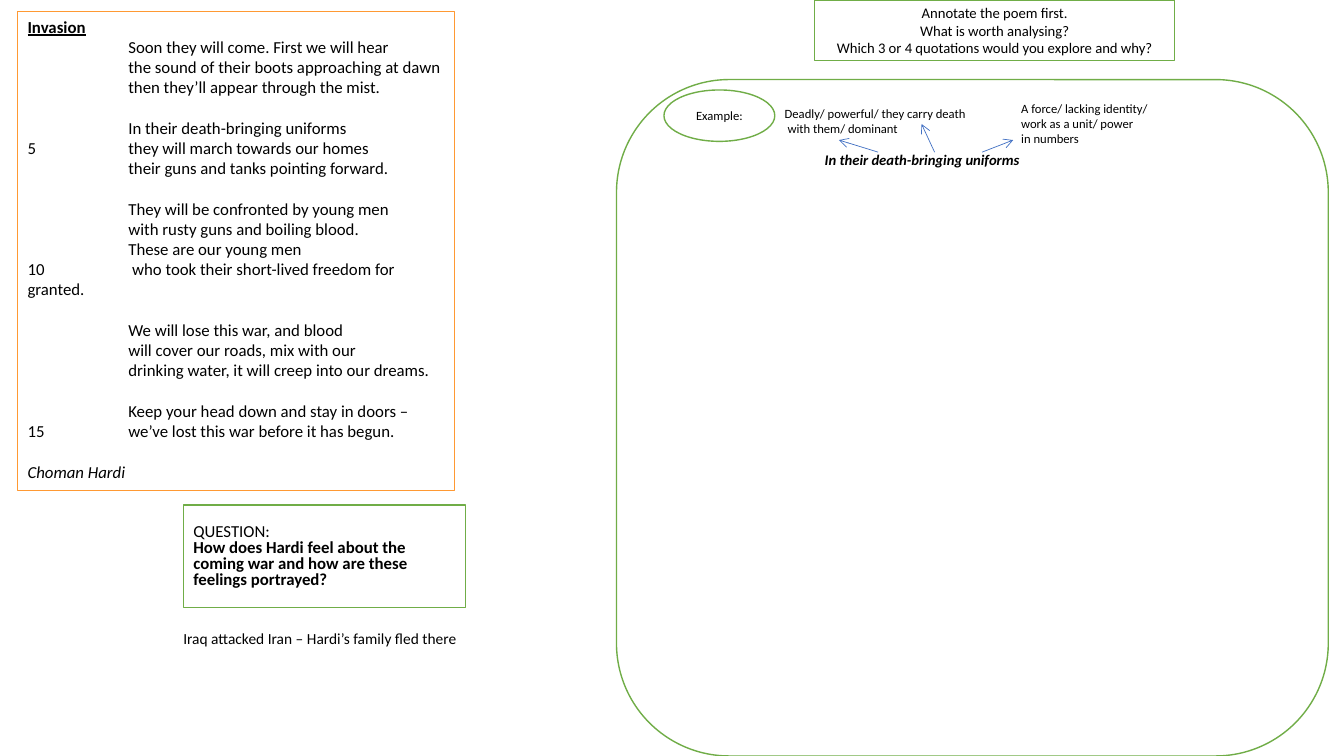
"""Build a one-page poetry analysis worksheet for "Invasion"."""
from dataclasses import dataclass

from lxml import etree
from pptx import Presentation
from pptx import util as u
from pptx.dml.color import RGBColor
from pptx.enum import shapes, text
from pptx.oxml.ns import qn

WIDTH, HEIGHT = u.Inches(13.33), u.Inches(7.5)
FONT, BLACK, WHITE = "Calibri", "000000", "FFFFFF"
GREEN, ORANGE, BLUE = "70AD47", "FF9933", "4472C4"
STANZA_GAP = 14.65
VERSE_TABS = (7.5, 30)

RECT = shapes.MSO_SHAPE.RECTANGLE
ROUNDED = shapes.MSO_SHAPE.ROUNDED_RECTANGLE
OVAL = shapes.MSO_SHAPE.OVAL
LEFT, CENTER = text.PP_ALIGN.LEFT, text.PP_ALIGN.CENTER
TOP, MIDDLE = text.MSO_ANCHOR.TOP, text.MSO_ANCHOR.MIDDLE

STANZAS = (
    (
        "Invasion",
        "\tSoon they will come. First we will hear",
        "\tthe sound of their boots approaching at dawn",
        "\tthen they’ll appear through the mist.",
    ),
    (
        "\tIn their death-bringing uniforms",
        "5 \tthey will march towards our homes",
        "\ttheir guns and tanks pointing forward.",
    ),
    (
        "\tThey will be confronted by young men",
        "\twith rusty guns and boiling blood.",
        "\tThese are our young men",
        "10\t who took their short-lived freedom for \tgranted.",
    ),
    (
        "\tWe will lose this war, and blood",
        "\twill cover our roads, mix with our",
        "\tdrinking water, it will creep into our dreams.",
    ),
    (
        "\tKeep your head down and stay in doors –",
        "15 \twe’ve lost this war before it has begun.",
    ),
    ("Choman Hardi",),
)


@dataclass(frozen=True)
class Panel:
    """A box placed in percent of the slide's width and height."""

    left: float
    top: float
    width: float
    height: float
    lines: tuple[str, ...] = ()
    size: float = 12
    kind: shapes.MSO_SHAPE | None = RECT
    line: str | None = GREEN
    weight: float = 1
    align: text.PP_ALIGN = LEFT
    anchor: text.MSO_ANCHOR = MIDDLE
    wrap: bool = True


@dataclass(frozen=True)
class Note(Panel):
    """An unframed text box as wide as its text."""

    size: float = 9
    kind: shapes.MSO_SHAPE | None = None
    anchor: text.MSO_ANCHOR = TOP
    wrap: bool = False


@dataclass(frozen=True)
class Arrow:
    """An arrow from the quotation up to an annotation, in percent."""

    start: float
    end: float
    end_top: float


POEM = Panel(1.31, 1.5, 32.48, 63.33, tuple(verse for stanza in STANZAS for verse in stanza),
             line=ORANGE, weight=0.75, anchor=TOP)
CONTEXT = Panel(12.9, 82.53, 22.5, 3.87, ("Iraq attacked Iran – Hardi’s family fled there",),
                size=11, line=None, anchor=TOP, wrap=False)
TASK = Panel(60.62, 0, 26.78, 8,
             ("Annotate the poem first.", "What is worth analysing?",
              "Which 3 or 4 quotations would you explore and why?"),
             size=10.5, align=CENTER)
QUESTION = Panel(13.65, 66.8, 21, 13.6,
                 ("QUESTION:",
                  "How does Hardi feel about the coming war and how are these feelings portrayed?"))
WORKSPACE = Panel(45.87, 10.53, 52.96, 89.47, kind=ROUNDED)
QUOTATION = Note(60.62, 19.33, 16.2, 3.73, ("In their death-bringing uniforms",), size=10.5)
EXAMPLE = Panel(49.4, 11.9, 8.25, 6.8, ("Example:",), size=9, kind=OVAL, align=CENTER)
DEATH = Note(57.65, 13.33, 15.15, 5.33,
             ("Deadly/ powerful/ they carry death", " with them/ dominant"))
FORCE = Note(75.24, 12.67, 11.25, 7.47,
             ("A force/ lacking identity/", "work as a unit/ power", "in numbers"))

ARROW_START_TOP = 20.13
ARROWS = (Arrow(73.07, 75.39, 18.53), Arrow(65.34, 62.42, 18.53), Arrow(69.54, 68.57, 16.4))


def color(value: str) -> RGBColor:
    """Turn a hex string into a colour."""
    return RGBColor.from_string(value)


def across(share: float) -> int:
    """Turn a percentage of the slide's width into a length."""
    return round(WIDTH * share / 100)


def down(share: float) -> int:
    """Turn a percentage of the slide's height into a length."""
    return round(HEIGHT * share / 100)


def draw_panel(page, panel: Panel):
    """Draw a panel with its text and return its paragraphs."""
    place = (across(panel.left), down(panel.top), across(panel.width), down(panel.height))
    if panel.kind is None:
        box = page.shapes.add_textbox(*place)
    else:
        box = page.shapes.add_shape(panel.kind, *place)
        box.shadow.inherit = False
        box.fill.solid()
        box.fill.fore_color.rgb = color(WHITE)
        if panel.line:
            box.line.color.rgb = color(panel.line)
            box.line.width = u.Pt(panel.weight)
        else:
            box.line.fill.background()
    frame = box.text_frame
    frame.text = "\n".join(panel.lines)
    frame.word_wrap = panel.wrap
    frame.vertical_anchor = panel.anchor
    if panel.anchor == TOP:
        frame.auto_size = text.MSO_AUTO_SIZE.SHAPE_TO_FIT_TEXT
    for para in frame.paragraphs:
        para.alignment = panel.align
        for span in para.runs:
            span.font.name = FONT
            span.font.size = u.Pt(panel.size)
            span.font.color.rgb = color(BLACK)
    return frame.paragraphs


def draw_poem(page) -> None:
    """Draw the poem with its title, tab stops, stanza gaps and author."""
    paras = draw_panel(page, POEM)
    title, author = paras[0].runs[0], paras[-1].runs[0]
    title.font.bold = title.font.underline = True
    author.font.italic = True
    for para in paras:
        stops = etree.SubElement(para._p.get_or_add_pPr(), qn("a:tabLst"))
        for share in VERSE_TABS:
            etree.SubElement(stops, qn("a:tab"), pos=str(across(share)), algn="l")
    first = 0
    for stanza in STANZAS[:-1]:
        first += len(stanza)
        paras[first].space_before = u.Pt(STANZA_GAP)


def draw_question(page) -> None:
    """Draw the essay question in tight lines."""
    paras = draw_panel(page, QUESTION)
    for para in paras:
        para.line_spacing = 0.8
    paras[1].runs[0].font.bold = True


def draw_arrow(page, arrow: Arrow) -> None:
    """Draw a thin arrow with an open head."""
    link = page.shapes.add_connector(
        shapes.MSO_CONNECTOR.STRAIGHT, across(arrow.start), down(ARROW_START_TOP),
        across(arrow.end), down(arrow.end_top))
    link.line.color.rgb = color(BLUE)
    link.line.width = u.Pt(0.5)
    etree.SubElement(link.line._get_or_add_ln(), qn("a:tailEnd"), type="arrow")
    etree.SubElement(link._element.spPr, qn("a:effectLst"))


def main() -> None:
    """Build and save the worksheet."""
    deck = Presentation()
    deck.slide_width, deck.slide_height = WIDTH, HEIGHT
    page = deck.slides.add_slide(deck.slide_layouts[6])
    draw_poem(page)
    draw_question(page)
    for panel in (CONTEXT, TASK, WORKSPACE, EXAMPLE, DEATH, FORCE):
        draw_panel(page, panel)
    quotation = draw_panel(page, QUOTATION)[0].runs[0]
    quotation.font.bold = quotation.font.italic = True
    for arrow in ARROWS:
        draw_arrow(page, arrow)
    deck.save("out.pptx")


if __name__ == "__main__":
    main()
